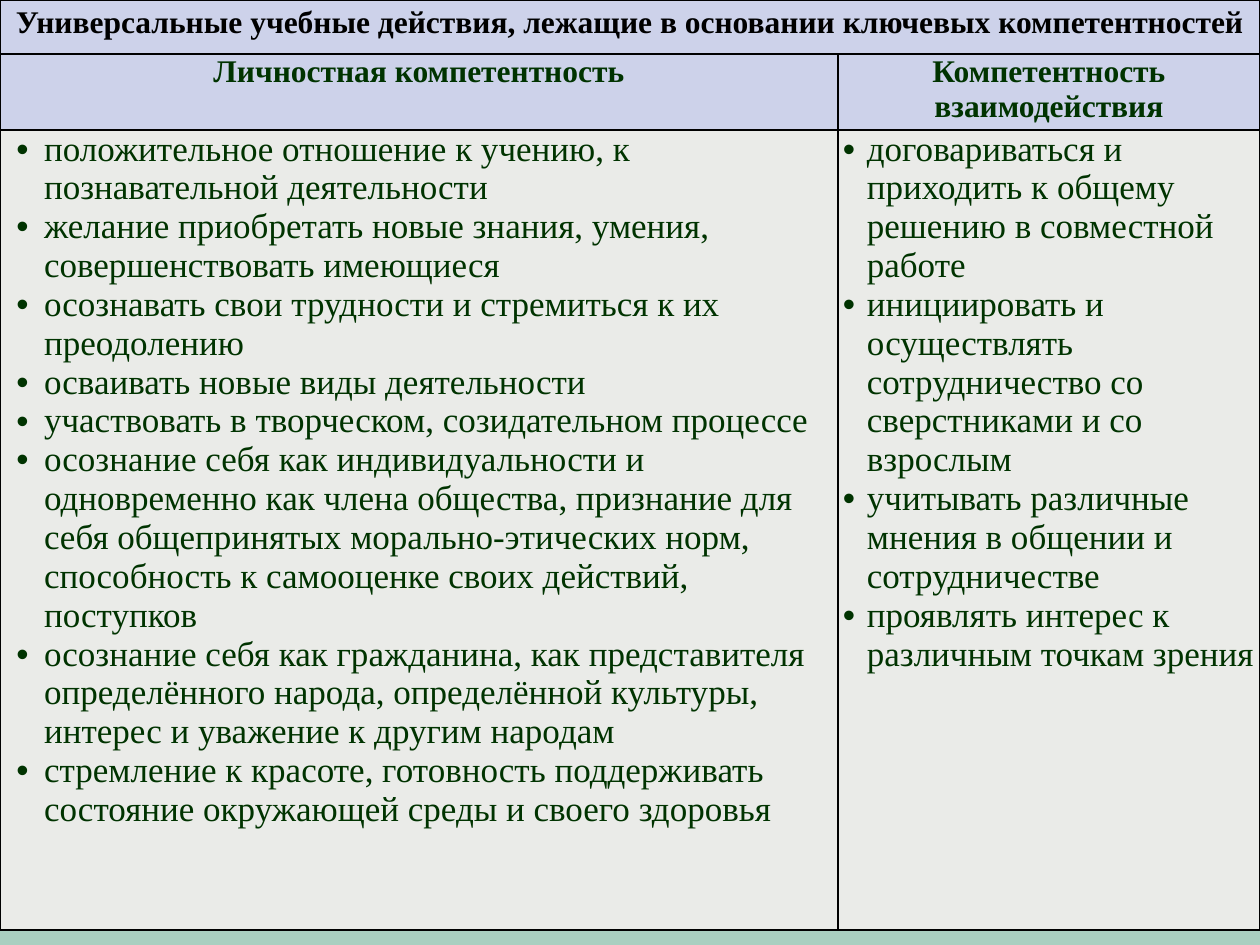
from lxml.etree import SubElement
from pptx import Presentation
from pptx.dml.color import RGBColor
from pptx.enum.text import PP_ALIGN as ALIGN
from pptx.oxml.ns import qn
from pptx.util import Inches, Pt

COLORS = {"page": "A9CFC0", "header": "CDD2EA", "body": "EAEBE8",
          "title": "000000", "text": "003300", "border": "000000"}
FONT = "Times New Roman"

TITLE = "Универсальные учебные действия, лежащие в основании ключевых компетентностей"
HEADERS = ["Личностная компетентность", "Компетентность взаимодействия"]
PERSONAL = [
    "положительное отношение к учению, к познавательной деятельности",
    "желание приобретать новые знания, умения, совершенствовать имеющиеся",
    "осознавать свои трудности и стремиться к их преодолению",
    "осваивать новые виды деятельности",
    "участвовать в творческом, созидательном процессе",
    "осознание себя как индивидуальности и одновременно как члена общества, "
    "признание для себя общепринятых морально-этических норм, "
    "способность к самооценке своих действий, поступков",
    "осознание себя как гражданина, как представителя определённого народа, "
    "определённой культуры, интерес и уважение к другим народам",
    "стремление к красоте, готовность поддерживать состояние окружающей среды "
    "и своего здоровья",
]
INTERACTION = [
    "договариваться и приходить к общему решению в совместной работе",
    "инициировать и осуществлять сотрудничество со сверстниками и со взрослым",
    "учитывать различные мнения в общении и сотрудничестве",
    "проявлять интерес к различным точкам зрения",
]


def style_cell(cell, fill):
    margins = {"margin_left": Inches(0.04), "margin_right": Inches(0.04),
               "margin_top": 0, "margin_bottom": 0}
    for name, value in margins.items():
        setattr(cell, name, value)
    # Borders come before the fill in the cell properties
    tc_pr = cell._tc.get_or_add_tcPr()
    for side in ("L", "R", "T", "B"):
        ln = SubElement(tc_pr, qn(f"a:ln{side}"), w=str(Pt(1)))
        solid = SubElement(ln, qn("a:solidFill"))
        SubElement(solid, qn("a:srgbClr"), val=COLORS["border"])
    cell.fill.solid()
    cell.fill.fore_color.rgb = RGBColor.from_string(COLORS[fill])


def write_cell(cell, lines, size, bold, color, indent=None):
    tf = cell.text_frame
    for i, line in enumerate(lines):
        p = tf.paragraphs[0] if i == 0 else tf.add_paragraph()
        p.alignment = ALIGN.LEFT if indent else ALIGN.CENTER
        if indent:
            left, hanging = indent
            p_pr = p._p.get_or_add_pPr()
            p_pr.set("marL", str(Inches(left)))
            p_pr.set("indent", str(Inches(-hanging)))
            SubElement(p_pr, qn("a:buFont"), typeface="Arial")
            SubElement(p_pr, qn("a:buChar"), char="•")
        r = p.add_run()
        r.text = line
        for name, value in {"name": FONT, "size": Pt(size), "bold": bold}.items():
            setattr(r.font, name, value)
        r.font.color.rgb = RGBColor.from_string(COLORS[color])


# Slide
prs = Presentation()
prs.slide_width, prs.slide_height = Inches(10), Inches(7.5)
s = prs.slides.add_slide(prs.slide_layouts[6])
s.background.fill.solid()
s.background.fill.fore_color.rgb = RGBColor.from_string(COLORS["page"])

# Table grid
table = s.shapes.add_table(3, 2, 0, 0, Inches(10), Inches(7.37)).table
for col, width in zip(table.columns, (6.65, 3.35)):
    col.width = Inches(width)
for row, height in zip(table.rows, (0.43, 0.6, 6.35)):
    row.height = Inches(height)
for row, fill in zip(table.rows, ("header", "header", "body")):
    for cell in row.cells:
        style_cell(cell, fill)

# Title row
title = table.cell(0, 0)
title.merge(table.cell(0, 1))
write_cell(title, [TITLE], 18, True, "title")
title.text_frame.paragraphs[0].line_spacing = 1.15

# Column headers and bulleted lists
columns = [(PERSONAL, (0.31, 0.22)), (INTERACTION, (0.19, 0.19))]
for i, (items, indent) in enumerate(columns):
    write_cell(table.cell(1, i), [HEADERS[i]], 18, True, "text")
    write_cell(table.cell(2, i), items, 20, False, "text", indent)

prs.save("out.pptx")
